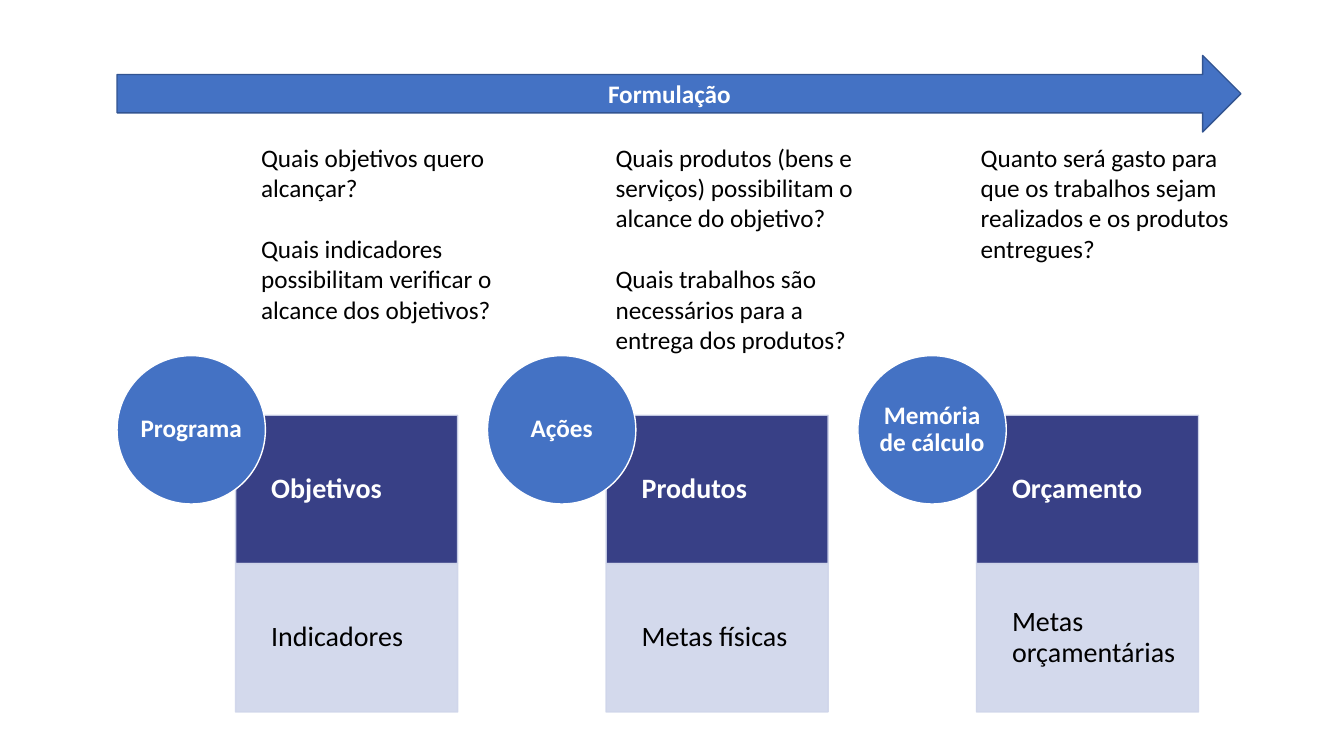
from dataclasses import dataclass

from lxml.etree import SubElement
from pptx import Presentation
from pptx.dml.color import RGBColor
from pptx.enum.shapes import MSO_SHAPE as Preset
from pptx.enum.text import MSO_ANCHOR as Anchor, PP_ALIGN as Align
from pptx.oxml.ns import qn
from pptx.util import Pt

BLUE, NAVY, PALE = "4472C4", "232C79", "CFD5EA"
WHITE, BLACK, ARROW_EDGE = "FFFFFF", "000000", "325491"

LEFT, COLUMN_PITCH = 83.6, 264.6
CIRCLE_TOP, CIRCLE_SIZE = 254, 106
CARD_OFFSET_X, CARD_OFFSET_Y = 84.7, 42.6
CARD_WIDTH, CARD_HEIGHT = 158.6, 106
QUESTIONS_TOP = 98


@dataclass
class Stage:
    name: str
    heading: str
    detail: str
    questions: list
    questions_left: float
    questions_width: float


STAGES = [
    Stage("Programa", "Objetivos", "Indicadores",
          ["Quais objetivos quero alcançar?",
           "Quais indicadores possibilitam verificar o alcance dos objetivos?"],
          179.4, 185),
    Stage("Ações", "Produtos", "Metas físicas",
          ["Quais produtos (bens e serviços) possibilitam o alcance do objetivo?",
           "Quais trabalhos são necessários para a entrega dos produtos?"],
          432.6, 193),
    Stage("Memória de cálculo", "Orçamento", "Metas orçamentárias",
          ["Quanto será gasto para que os trabalhos sejam realizados e os "
           "produtos entregues?"],
          693.4, 193),
]


def paint(color_format, color, opacity=100):
    """Set a fill's colour, with its opacity in percent."""
    color_format.solid()
    color_format.fore_color.rgb = RGBColor.from_string(color)
    if opacity < 100:
        color_element = color_format._xPr.find(".//" + qn("a:srgbClr"))
        SubElement(color_element, qn("a:alpha"), val=str(opacity * 1000))


def style_text(frame, size, color, bold=False, align=Align.LEFT, spacing=1.0):
    frame.word_wrap = True
    for paragraph in frame.paragraphs:
        paragraph.alignment = align
        paragraph.line_spacing = spacing
        for run in paragraph.runs:
            font = run.font
            font.name, font.size, font.bold = "Calibri", Pt(size), bold
            font.color.rgb = RGBColor.from_string(color)


def set_margins(frame, left, others):
    frame.margin_left = Pt(left)
    frame.margin_top = frame.margin_right = frame.margin_bottom = Pt(others)


def add_block(slide, preset, box, text, fill, edge, opacity=100):
    """Add a filled shape with a label centred in height; return its text frame."""
    block = slide.shapes.add_shape(preset, *map(Pt, box))
    block.shadow.inherit = False
    paint(block.fill, fill, opacity)
    paint(block.line.fill, edge, opacity)
    block.line.width = Pt(1)
    frame = block.text_frame
    frame.text = text
    frame.vertical_anchor = Anchor.MIDDLE
    return frame


def add_phase_arrow(slide, box, label):
    frame = add_block(slide, Preset.RIGHT_ARROW, box, label, BLUE, ARROW_EDGE)
    style_text(frame, 18, WHITE, True, Align.CENTER)


def add_card(slide, box, text, fill, color, bold):
    frame = add_block(slide, Preset.RECTANGLE, box, text, fill, PALE, 90)
    set_margins(frame, 25.4, 11.4)
    style_text(frame, 20, color, bold, spacing=0.9)


def add_stage(slide, left, top, stage):
    """Add the heading and detail cards with the stage's circle over their corner."""
    card_left, card_top = left + CARD_OFFSET_X, top + CARD_OFFSET_Y
    add_card(slide, (card_left, card_top, CARD_WIDTH, CARD_HEIGHT),
             stage.heading, NAVY, WHITE, True)
    add_card(slide, (card_left, card_top + CARD_HEIGHT, CARD_WIDTH, CARD_HEIGHT),
             stage.detail, PALE, BLACK, False)
    frame = add_block(slide, Preset.OVAL, (left, top, CIRCLE_SIZE, CIRCLE_SIZE),
                      stage.name, BLUE, WHITE)
    set_margins(frame, 0, 0)
    style_text(frame, 18, WHITE, True, Align.CENTER, 0.9)


def add_questions(slide, box, questions):
    frame = slide.shapes.add_textbox(*map(Pt, box)).text_frame
    frame.text = "\n".join(questions)
    style_text(frame, 18, BLACK)
    for paragraph in frame.paragraphs[1:]:
        paragraph.space_before = Pt(22)


def main():
    deck = Presentation()
    deck.slide_width, deck.slide_height = Pt(960), Pt(540)
    slide = deck.slides.add_slide(deck.slide_layouts[6])
    for index, stage in enumerate(STAGES):
        add_stage(slide, LEFT + index * COLUMN_PITCH, CIRCLE_TOP, stage)
        box = (stage.questions_left, QUESTIONS_TOP, stage.questions_width, 138)
        add_questions(slide, box, stage.questions)
    add_phase_arrow(slide, (LEFT, 39.6, 802.8, 54.7), "Formulação")
    deck.save("out.pptx")


if __name__ == "__main__":
    main()
